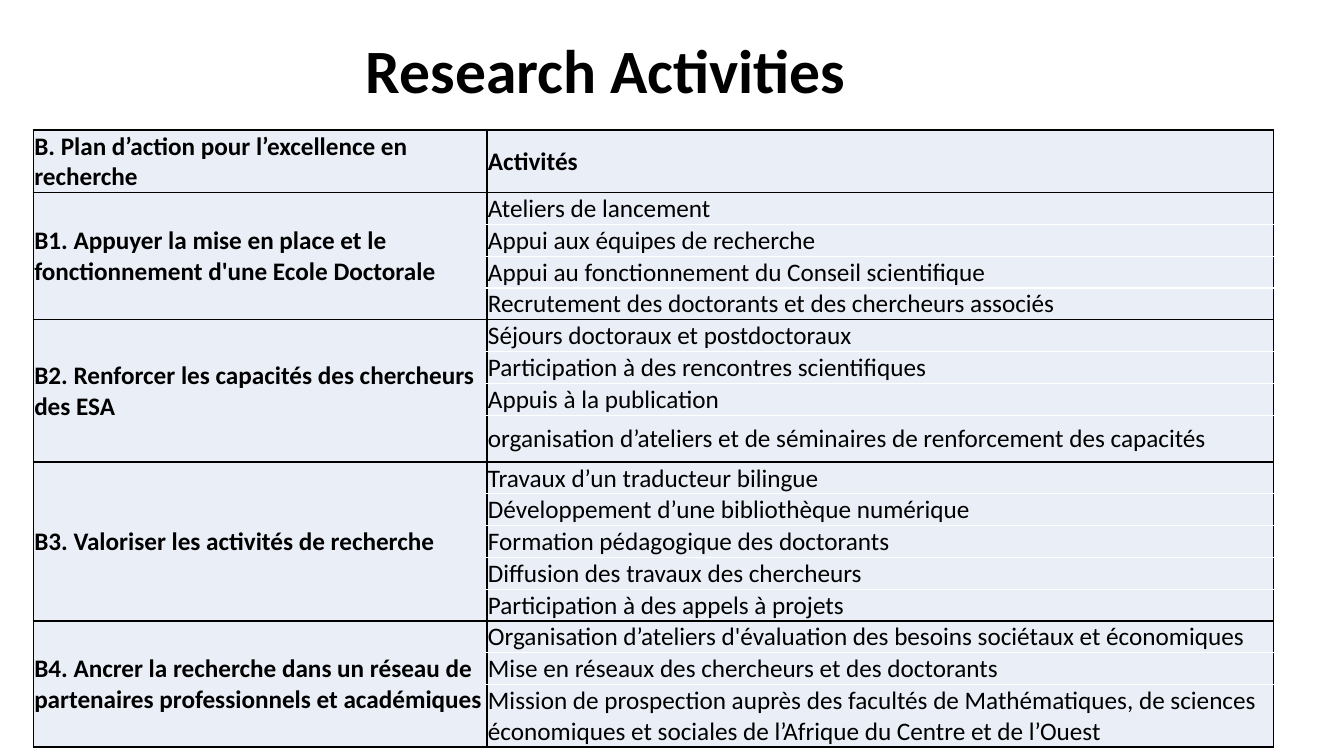
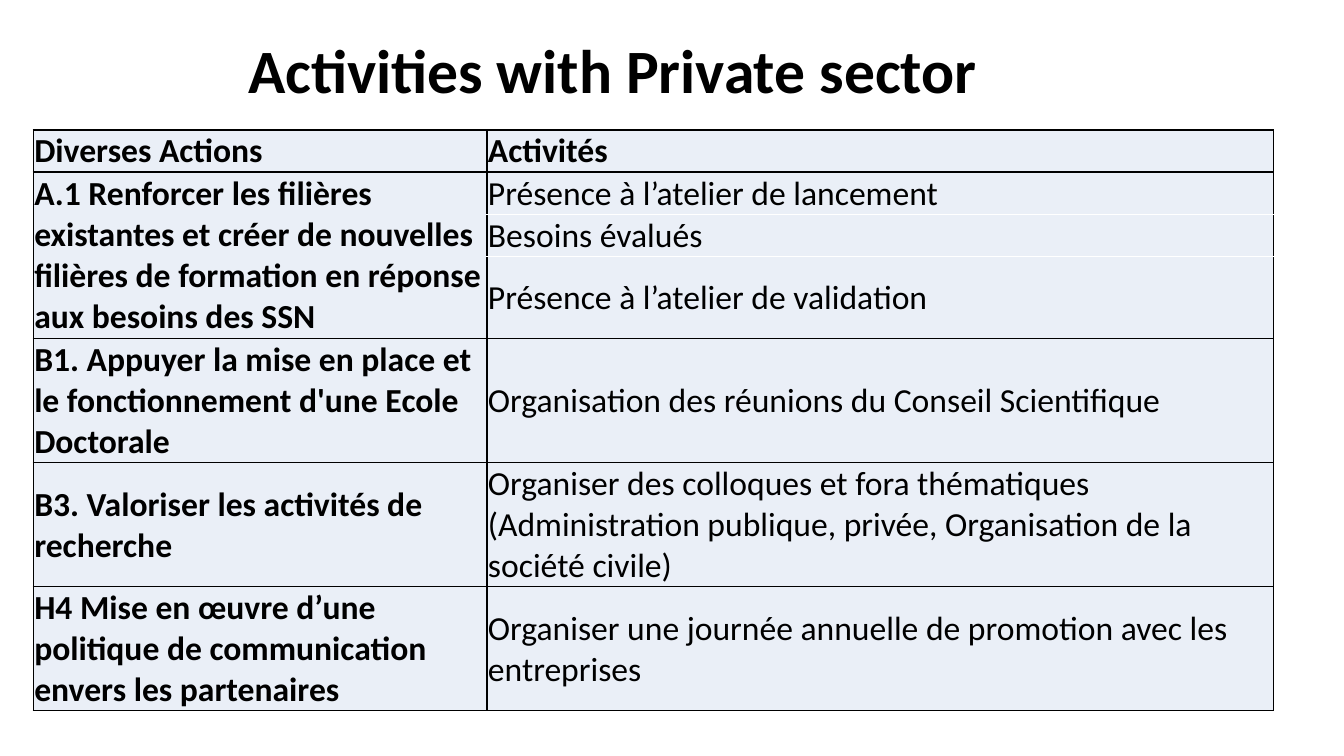
from dataclasses import dataclass

from lxml import etree
from pptx import Presentation
from pptx.dml.color import RGBColor
from pptx.enum.text import MSO_ANCHOR, PP_ALIGN
from pptx.oxml.ns import qn
from pptx.util import Inches, Pt

BLACK = RGBColor(0x00, 0x00, 0x00)
WHITE = RGBColor(0xFF, 0xFF, 0xFF)
PALE_BLUE = RGBColor(0xEA, 0xEF, 0xF7)
FONT = "Calibri"
MIDDLE = MSO_ANCHOR.MIDDLE
CENTER = PP_ALIGN.CENTER
TITLE_ONLY = 5
TITLE_SIZE = 44
LEFT = 0.33
TABLE_TOP = 1.29
COLUMN_WIDTHS = (4.5, 7.8)


@dataclass(frozen=True)
class Activity:
    text: str
    lines: float = 1


@dataclass(frozen=True)
class Action:
    name: str
    activities: tuple[Activity, ...]


@dataclass(frozen=True)
class ActivityPage:
    title: str
    text_size: int
    line_height: float
    actions: tuple[Action, ...]


PAGES = (
    ActivityPage("Research Activities ", 18, 0.31, (
        Action("B. Plan d’action pour l’excellence en recherche", (
            Activity("Activités", 2),
        )),
        Action("B1. Appuyer la mise en place et le fonctionnement d'une Ecole Doctorale", (
            Activity("Ateliers de lancement"),
            Activity("Appui aux équipes de recherche"),
            Activity("Appui au fonctionnement du Conseil scientifique"),
            Activity("Recrutement des doctorants et des chercheurs associés"),
        )),
        Action("B2. Renforcer les capacités des chercheurs des ESA", (
            Activity("Séjours doctoraux et postdoctoraux"),
            Activity("Participation à des rencontres scientifiques"),
            Activity("Appuis à la publication"),
            Activity("organisation d’ateliers et de séminaires de renforcement des capacités", 1.5),
        )),
        Action("B3. Valoriser les activités de recherche", (
            Activity("Travaux d’un traducteur bilingue"),
            Activity("Développement d’une bibliothèque numérique"),
            Activity("Formation pédagogique des doctorants"),
            Activity("Diffusion des travaux des chercheurs"),
            Activity("Participation à des appels à projets"),
        )),
        Action("B4. Ancrer la recherche dans un réseau de partenaires professionnels et académiques", (
            Activity("Organisation d’ateliers d'évaluation des besoins sociétaux et économiques"),
            Activity("Mise en réseaux des chercheurs et des doctorants"),
            Activity("Mission de prospection auprès des facultés de Mathématiques, de sciences "
                     "économiques et sociales de l’Afrique du Centre et de l’Ouest", 2),
        )),
    )),
    ActivityPage("Activities with Private sector", 24, 0.41, (
        Action("Diverses Actions", (Activity("Activités"),)),
        Action("A.1 Renforcer les filières existantes et créer de nouvelles filières "
               "de formation en réponse aux besoins des SSN", (
                   Activity("Présence à l’atelier de lancement"),
                   Activity("Besoins évalués"),
                   Activity("Présence à l’atelier de validation", 2),
               )),
        Action("B1. Appuyer la mise en place et le fonctionnement d'une Ecole Doctorale", (
            Activity("Organisation des réunions du Conseil Scientifique", 3),
        )),
        Action("B3. Valoriser les activités de recherche", (
            Activity("Organiser des colloques et fora thématiques (Administration publique, "
                     "privée, Organisation de la société civile)", 3),
        )),
        Action("H4 Mise en œuvre d’une politique de communication envers les partenaires", (
            Activity("Organiser une journée annuelle de promotion avec les entreprises", 3),
        )),
    )),
)


def add_text(para, text: str, size: int, bold: bool) -> None:
    span = para.add_run()
    span.text = text
    span.font.name = FONT
    span.font.size = Pt(size)
    span.font.bold = bold
    span.font.color.rgb = BLACK


def set_title(page, text: str) -> None:
    box = page.shapes.title
    box.left, box.top = Inches(LEFT), Inches(0)
    box.width, box.height = Inches(11.5), Inches(1.45)
    box.text_frame.vertical_anchor = MIDDLE
    para = box.text_frame.paragraphs[0]
    para.alignment = CENTER
    para.line_spacing = 0.9
    add_text(para, text, TITLE_SIZE, True)


def set_borders(cell, top: RGBColor, bottom: RGBColor) -> None:
    properties = cell._tc.get_or_add_tcPr()
    sides = (("lnL", BLACK), ("lnR", BLACK), ("lnT", top), ("lnB", bottom))
    for position, (side, color) in enumerate(sides):
        line = etree.Element(qn(f"a:{side}"), w=str(Pt(1)))
        fill = etree.SubElement(line, qn("a:solidFill"))
        etree.SubElement(fill, qn("a:srgbClr"), val=str(color))
        properties.insert(position, line)


def format_cell(cell, top: RGBColor = BLACK, bottom: RGBColor = BLACK) -> None:
    cell.fill.solid()
    cell.fill.fore_color.rgb = PALE_BLUE
    cell.vertical_anchor = MIDDLE
    cell.margin_left = cell.margin_right = cell.margin_top = Inches(0.01)
    cell.margin_bottom = 0
    set_borders(cell, top, bottom)


def add_activity_table(page, content: ActivityPage) -> None:
    row_count = sum(len(action.activities) for action in content.actions)
    height = content.line_height * sum(
        activity.lines for action in content.actions for activity in action.activities)
    table = page.shapes.add_table(
        row_count, len(COLUMN_WIDTHS), Inches(LEFT), Inches(TABLE_TOP),
        Inches(sum(COLUMN_WIDTHS)), Inches(height)).table
    table.first_row = False
    table.horz_banding = False
    for column, width in zip(table.columns, COLUMN_WIDTHS):
        column.width = Inches(width)

    row = 0
    for action in content.actions:
        first, last = row, row + len(action.activities) - 1
        for activity in action.activities:
            table.rows[row].height = Inches(content.line_height * activity.lines)
            name_cell, activity_cell = table.cell(row, 0), table.cell(row, 1)
            format_cell(name_cell)
            format_cell(activity_cell,
                        BLACK if row == first else WHITE,
                        BLACK if row == last else WHITE)
            add_text(activity_cell.text_frame.paragraphs[0], activity.text,
                     content.text_size, first == 0)
            row += 1
        name_cell = table.cell(first, 0)
        if last > first:
            name_cell.merge(table.cell(last, 0))
        add_text(name_cell.text_frame.paragraphs[0], action.name, content.text_size, True)


def main() -> None:
    deck = Presentation()
    deck.slide_width, deck.slide_height = Inches(13.33), Inches(7.5)
    for content in PAGES:
        page = deck.slides.add_slide(deck.slide_layouts[TITLE_ONLY])
        set_title(page, content.title)
        add_activity_table(page, content)
    deck.save("out.pptx")


if __name__ == "__main__":
    main()
